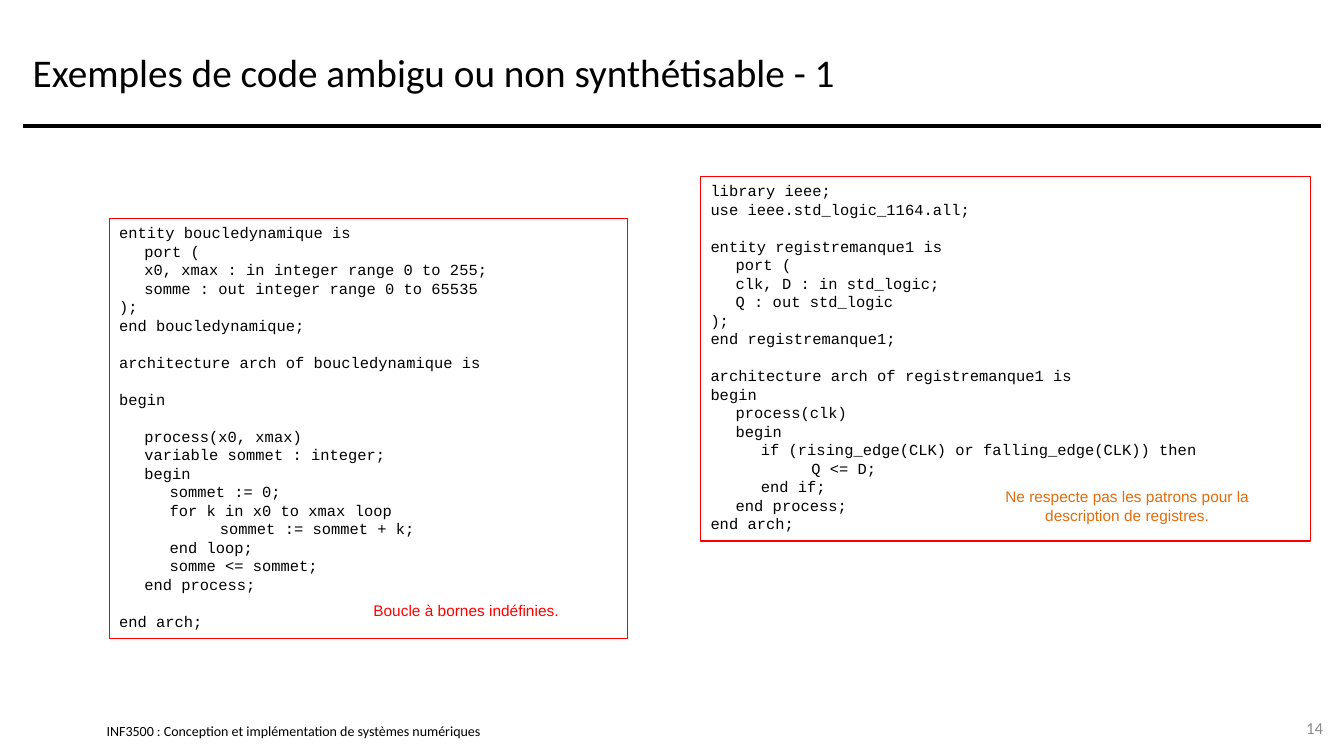
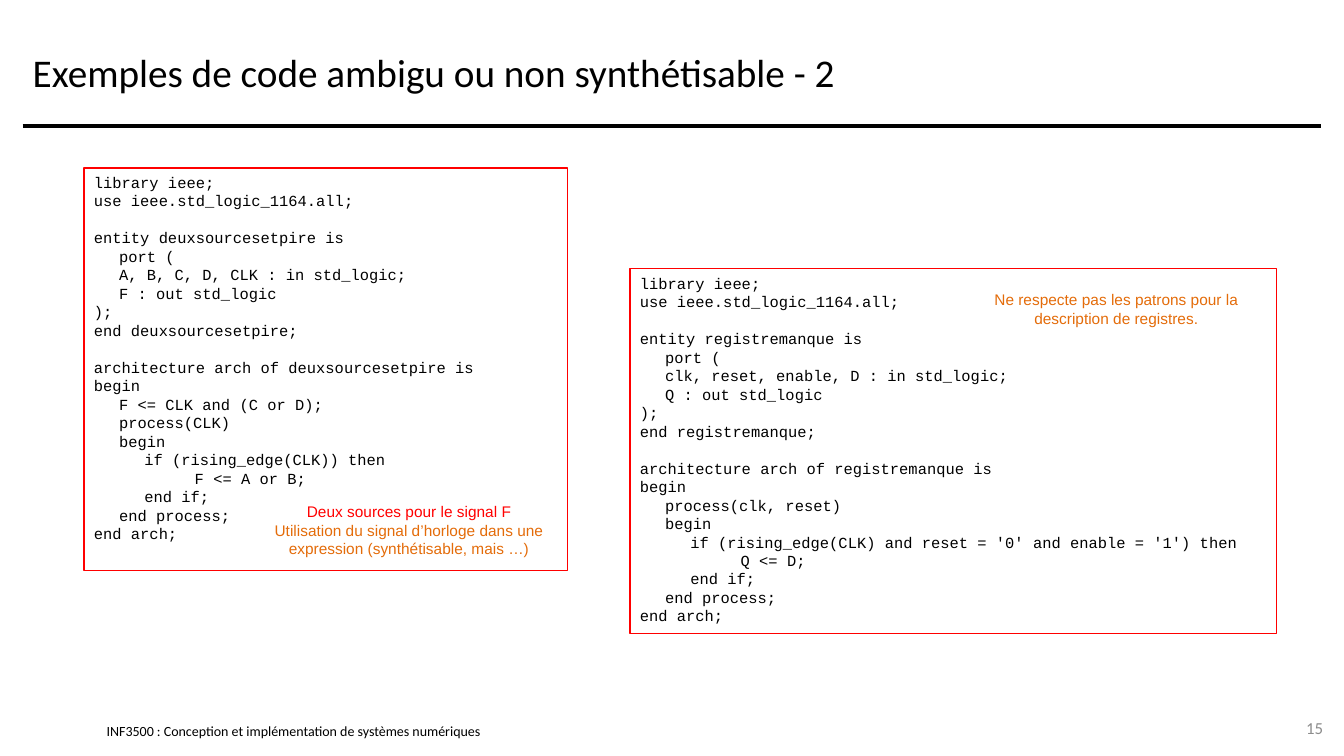
from lxml.etree import SubElement
from pptx import Presentation
from pptx.dml.color import RGBColor
from pptx.enum.shapes import MSO_CONNECTOR as CONN, MSO_SHAPE as SHAPE
from pptx.enum.text import MSO_ANCHOR as ANCHOR, PP_ALIGN as ALIGN
from pptx.oxml.ns import qn
from pptx.util import Inches, Pt

COLS, ROWS = 160, 90
BLACK, WHITE, GREY = "000000", "FFFFFF", "8C8C8C"
RED, ORANGE = "FF0000", "E46C0A"
SANS, MONO, NOTE = "Calibri", "Courier New", "Arial"
TAB_STOPS = (0.25, 0.5, 1)
INDENT = "    "
COURSE = "INF3500 : Conception et implémentation de systèmes numériques"
TITLE = "Exemples de code ambigu ou non synthétisable - {}"
PATTERN_NOTE = "Ne respecte pas les patrons pour la description de registres."

LIBRARY = """library ieee;
use ieee.std_logic_1164.all;

"""
DESIGN = """entity {name} is
    port (
    {inputs};
    {outputs}
);
end {name};

architecture arch of {name} is
{body}
end arch;"""
REGISTER = """begin
{concurrent}    process({signals})
    begin
        if ({condition}) then
            {assignment};
        end if;
    end process;"""
LOOP = """
begin

    process(x0, xmax)
    variable sommet : integer;
    begin
        sommet := 0;
        for k in x0 to xmax loop
            sommet := sommet + k;
        end loop;
        somme <= sommet;
    end process;
"""


def rgb(hex_color):
    return RGBColor.from_string(hex_color)


def grid(prs, col, row, cols, rows):
    w, h = prs.slide_width, prs.slide_height
    return (round(w * col / COLS), round(h * row / ROWS),
            round(w * cols / COLS), round(h * rows / ROWS))


def style(p, size, font, color, align=ALIGN.LEFT):
    p.alignment = align
    for r in p.runs:
        r.font.size, r.font.name = Pt(size), font
        r.font.color.rgb = rgb(color)


def add_text(slide, box, text, size, font, color, align=ALIGN.LEFT,
             anchor=ANCHOR.TOP):
    tf = slide.shapes.add_textbox(*box).text_frame
    tf.word_wrap, tf.vertical_anchor = True, anchor
    tf.text = text
    for p in tf.paragraphs:
        style(p, size, font, color, align)
    return tf


def add_frame(prs, number, page):
    slide = prs.slides.add_slide(prs.slide_layouts[5])

    tf = add_text(slide, grid(prs, 12.7, 86, 61.3, 2), COURSE, 10, SANS,
                  BLACK, anchor=ANCHOR.MIDDLE)
    tf.margin_left = tf.margin_right = tf.margin_top = tf.margin_bottom = 0

    left, top, width, height = grid(prs, 2.7, 2, 154.6, 13)
    rule = slide.shapes.add_connector(
        CONN.STRAIGHT, left, top + height, left + width, top + height)
    rule.line.color.rgb = rgb(BLACK)
    rule.line.width = Pt(3)
    SubElement(rule.element.spPr, qn("a:effectLst"))

    title = slide.shapes.title
    title.left, title.top, title.width, title.height = left, top, width, height
    title.text_frame.text = TITLE.format(number)
    title.text_frame.vertical_anchor = ANCHOR.MIDDLE
    style(title.text_frame.paragraphs[0], 28, SANS, BLACK)

    add_text(slide, grid(prs, 150.7, 84.2, 8, 4.8), str(page), 12, SANS, GREY,
             ALIGN.RIGHT, ANCHOR.MIDDLE)
    return slide


def set_tabs(p):
    tabs = SubElement(p._p.get_or_add_pPr(), qn("a:tabLst"))
    for stop in TAB_STOPS:
        SubElement(tabs, qn("a:tab"), pos=str(Inches(stop)), algn="l")


def add_code(slide, box, code):
    sp = slide.shapes.add_shape(SHAPE.RECTANGLE, *box)
    sp.shadow.inherit = False
    sp.fill.solid()
    sp.fill.fore_color.rgb = rgb(WHITE)
    sp.line.color.rgb = rgb(RED)
    sp.line.width = Pt(1)
    tf = sp.text_frame
    tf.word_wrap, tf.vertical_anchor = True, ANCHOR.TOP
    tf.text = code.replace(INDENT, "\t")
    for p in tf.paragraphs:
        set_tabs(p)
        style(p, 11, MONO, BLACK)
        if not p.runs:
            end = SubElement(p._p, qn("a:endParaRPr"), sz="1100")
            SubElement(end, qn("a:latin"), typeface=MONO)


def add_note(slide, box, lines):
    tf = add_text(slide, box, "\n".join(text for text, _ in lines), 11, NOTE,
                  BLACK, ALIGN.CENTER)
    for p, (_, color) in zip(tf.paragraphs, lines):
        style(p, 11, NOTE, color, ALIGN.CENTER)


def register(name, inputs, output, signals, condition, assignment="Q <= D",
             concurrent=""):
    body = REGISTER.format(signals=signals, condition=condition,
                           assignment=assignment, concurrent=concurrent)
    return LIBRARY + DESIGN.format(
        name=name, inputs=f"{inputs} : in std_logic",
        outputs=f"{output} : out std_logic", body=body)


def add_examples(prs, number, page, examples):
    slide = add_frame(prs, number, page)
    for box, code, _, _ in examples:
        add_code(slide, grid(prs, *box), code)
    for _, _, (col, row, rows), lines in examples:
        add_note(slide, grid(prs, col, row, 35.4, rows), lines)


def main():
    prs = Presentation()
    prs.slide_width, prs.slide_height = Inches(13.33), Inches(7.5)

    dynamic_loop = DESIGN.format(
        name="boucledynamique", inputs="x0, xmax : in integer range 0 to 255",
        outputs="somme : out integer range 0 to 65535", body=LOOP)
    both_edges = register("registremanque1", "clk, D", "Q", "clk",
                          "rising_edge(CLK) or falling_edge(CLK)")
    two_sources = register("deuxsourcesetpire", "A, B, C, D, CLK", "F", "CLK",
                           "rising_edge(CLK)", "F <= A or B",
                           INDENT + "F <= CLK and (C or D);\n")
    gated_edge = register(
        "registremanque", "clk, reset, enable, D", "Q", "clk, reset",
        "rising_edge(CLK) and reset = '0' and enable = '1'")

    add_examples(prs, 1, 14, [
        ((13, 26, 61.7, 50), dynamic_loop, (37.8, 71, 3.5),
         [("Boucle à bornes indéfinies.", RED)]),
        ((83.4, 21, 72.6, 43.4), both_edges, (116.5, 57.4, 5.6),
         [(PATTERN_NOTE, ORANGE)]),
    ])
    add_examples(prs, 2, 15, [
        ((10, 20, 57.6, 47.9), two_sources, (31, 59.2, 7.9),
         [("Deux sources pour le signal F", RED),
          ("Utilisation du signal d’horloge dans une expression "
           "(synthétisable, mais …)", ORANGE)]),
        ((75, 32, 77, 43.4), gated_edge, (115.2, 34, 5.6),
         [(PATTERN_NOTE, ORANGE)]),
    ])
    prs.save("out.pptx")


if __name__ == "__main__":
    main()
